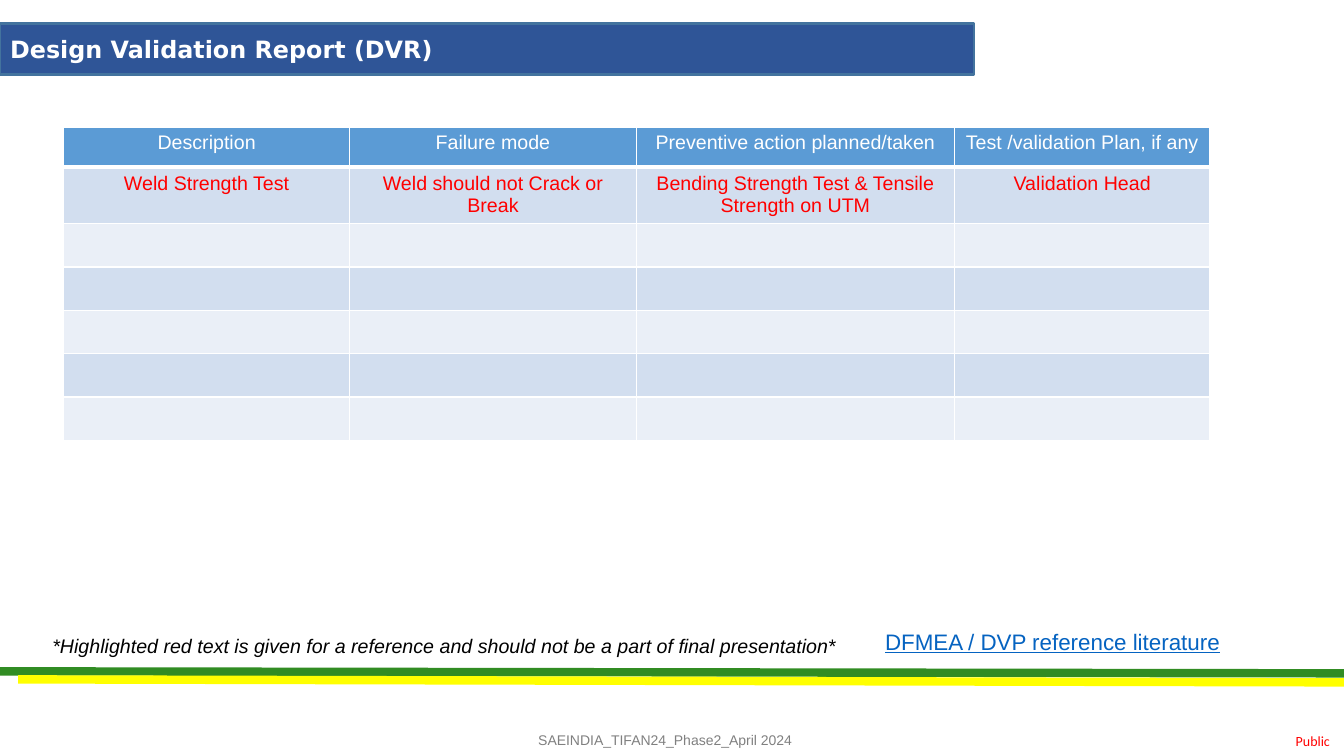
import pptx
import pptx.util
import pptx.dml.color
import pptx.enum.shapes
import pptx.enum.text
import pptx.oxml
import pptx.oxml.ns

Inches = pptx.util.Inches
Pt = pptx.util.Pt
RGBColor = pptx.dml.color.RGBColor
ALIGN = pptx.enum.text.PP_ALIGN
ANCHOR = pptx.enum.text.MSO_ANCHOR

WHITE = RGBColor(0xFF, 0xFF, 0xFF)
BLACK = RGBColor(0, 0, 0)
RED = RGBColor(0xFF, 0, 0)
GREY = RGBColor(0x80, 0x80, 0x80)
GREEN = RGBColor(0x31, 0x8C, 0x23)
YELLOW = RGBColor(0xFF, 0xFF, 0)
NAVY = RGBColor(0x2F, 0x55, 0x97)
STEEL = RGBColor(0x43, 0x73, 0x9E)
LINK_BLUE = RGBColor(0x05, 0x63, 0xC1)
HEADER_BLUE = RGBColor(0x5B, 0x9B, 0xD5)
BAND_DARK = RGBColor(0xD2, 0xDE, 0xEF)
BAND_LIGHT = RGBColor(0xEA, 0xEF, 0xF7)


def write_text(frame, text, color, alignment, formats):
    frame.text = text
    paragraph = frame.paragraphs[0]
    paragraph.alignment = alignment
    paragraph.font.color.rgb = color
    for name, value in formats.items():
        setattr(paragraph.font, name, value)


presentation = pptx.Presentation()
presentation.slide_width = Inches(13.33)
presentation.slide_height = Inches(7.5)
slide = presentation.slides.add_slide(presentation.slide_layouts[5])

stripes = [
    (0, 6.66, 13.33, 6.68, GREEN),
    (0.18, 6.74, 13.33, 6.77, YELLOW),
]
for left, top, right, bottom, color in stripes:
    stripe = slide.shapes.add_connector(
        pptx.enum.shapes.MSO_CONNECTOR.STRAIGHT,
        Inches(left), Inches(top), Inches(right), Inches(bottom))
    stripe.line.color.rgb = color
    stripe.line.width = Pt(6)
    stripe._element.spPr.append(pptx.oxml.parse_xml(
        f'<a:effectLst {pptx.oxml.ns.nsdecls("a")}/>'))

title = slide.shapes.title
title.left, title.top = Inches(0), Inches(0.23)
title.width, title.height = Inches(9.66), Inches(0.51)
title.fill.solid()
title.fill.fore_color.rgb = NAVY
title.line.color.rgb = STEEL
title.line.width = Pt(2)
title.text_frame.auto_size = pptx.enum.text.MSO_AUTO_SIZE.NONE
title.text_frame.vertical_anchor = ANCHOR.MIDDLE
write_text(title.text_frame, "Design Validation Report (DVR)", WHITE, ALIGN.LEFT,
           {"size": Pt(17), "name": "DejaVu Sans", "bold": True})

column_widths = [2.84, 2.84, 3.16, 2.53]
row_heights = [0.4, 0.56] + [0.43] * 5
table_text = [
    ["Description", "Failure mode", "Preventive action planned/taken",
     "Test /validation Plan, if any"],
    ["Weld Strength Test", "Weld should not Crack or Break",
     "Bending Strength Test & Tensile Strength on UTM", "Validation Head"],
]
table = slide.shapes.add_table(
    len(row_heights), len(column_widths), Inches(0.63), Inches(1.26),
    Inches(sum(column_widths)), Inches(sum(row_heights))).table
for column, width in zip(table.columns, column_widths):
    column.width = Inches(width)
for row_index, height in enumerate(row_heights):
    table.rows[row_index].height = Inches(height)
    for column_index, cell in enumerate(table.rows[row_index].cells):
        properties = cell._tc.get_or_add_tcPr()
        for side in "LRTB":
            thick = (row_index, side) in [(0, "B"), (1, "T")]
            properties.append(pptx.oxml.parse_xml(
                f'<a:ln{side} {pptx.oxml.ns.nsdecls("a")} w="{Pt(3 if thick else 1)}">'
                f'<a:solidFill><a:srgbClr val="{WHITE}"/></a:solidFill></a:ln{side}>'))
        cell.fill.solid()
        if row_index == 0:
            cell.fill.fore_color.rgb = HEADER_BLUE
        else:
            cell.fill.fore_color.rgb = BAND_DARK if row_index % 2 else BAND_LIGHT
        if row_index < len(table_text):
            write_text(cell.text_frame, table_text[row_index][column_index],
                       RED if row_index else WHITE, ALIGN.CENTER,
                       {"size": Pt(14), "name": "Arial", "bold": False})

notes = [
    ("*Highlighted red text is given for a reference and should not be a part of final presentation*",
     (0.35, 6.24, 8.12, 0.34), BLACK, ALIGN.CENTER, True,
     {"size": Pt(14), "name": "Arial", "italic": True}),
    ("DFMEA / DVP reference literature",
     (8.68, 6.18, 3.68, 0.37), LINK_BLUE, ALIGN.LEFT, True,
     {"size": Pt(16), "name": "Arial", "underline": True}),
    ("SAEINDIA_TIFAN24_Phase2_April 2024",
     (5.24, 7.21, 2.74, 0.27), GREY, ALIGN.LEFT, False,
     {"size": Pt(10), "name": "Arial"}),
]
for text, position, color, alignment, wrap, formats in notes:
    note = slide.shapes.add_textbox(*map(Inches, position))
    note.text_frame.word_wrap = wrap
    write_text(note.text_frame, text, color, alignment, formats)

label = slide.shapes.add_textbox(Inches(12.7), Inches(7.21), Inches(0.64), Inches(0.29))
label_format = {"word_wrap": True, "vertical_anchor": ANCHOR.MIDDLE, "margin_left": 0,
                "margin_top": 0, "margin_right": Inches(0.15), "margin_bottom": 0}
for name, value in label_format.items():
    setattr(label.text_frame, name, value)
write_text(label.text_frame, "Public", RED, ALIGN.RIGHT,
           {"size": Pt(10), "name": "Calibri"})

presentation.save("out.pptx")
